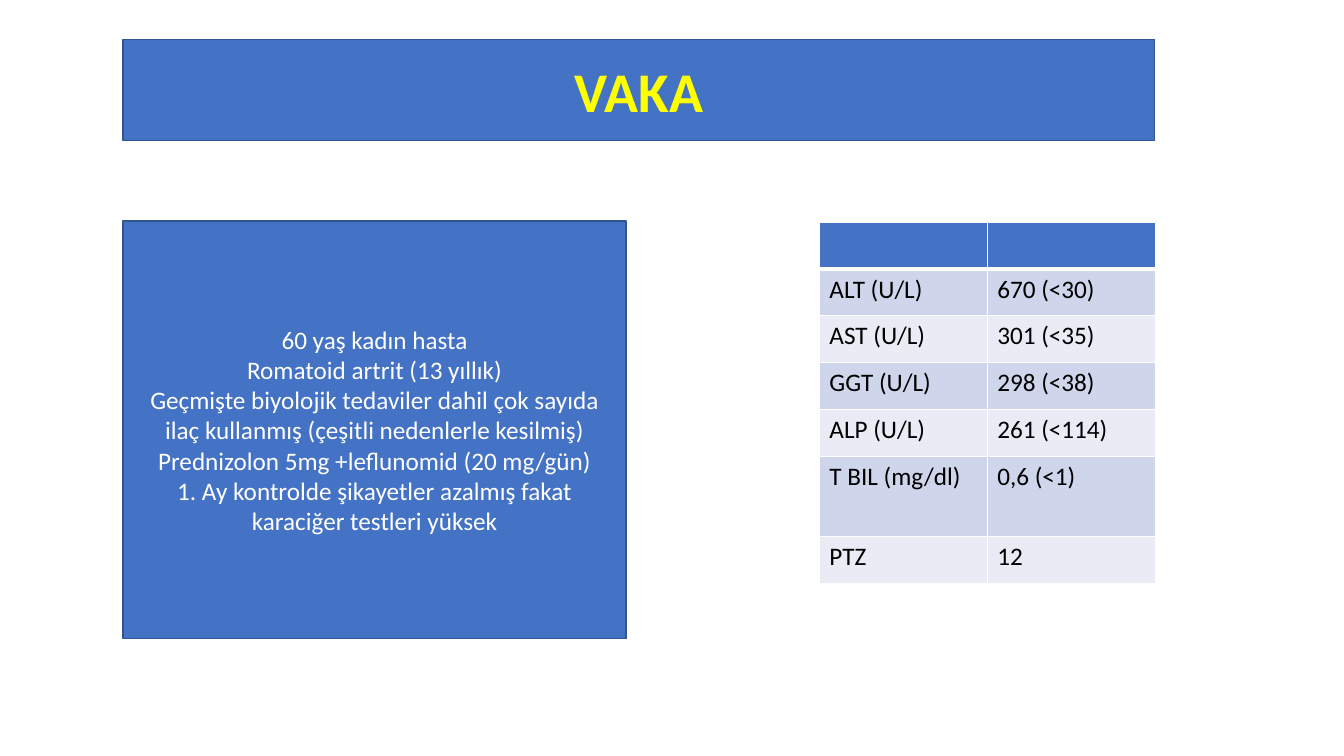
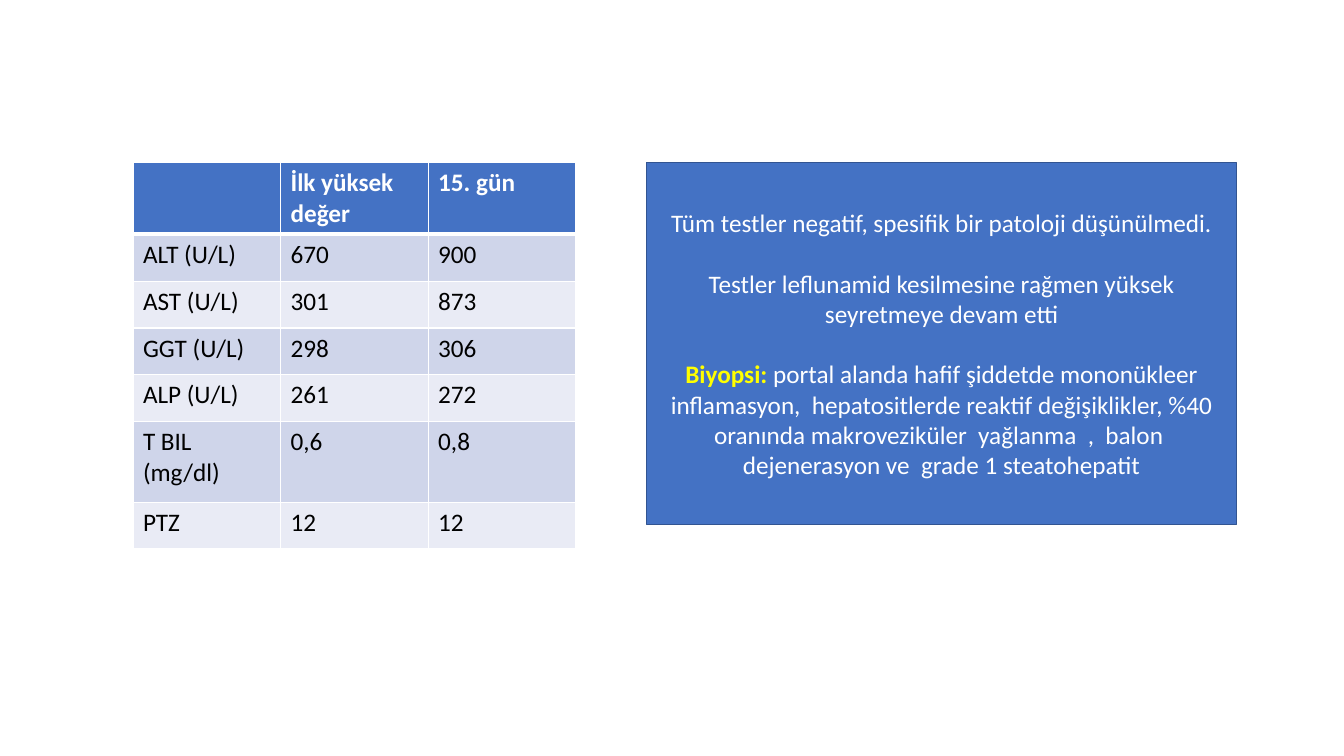
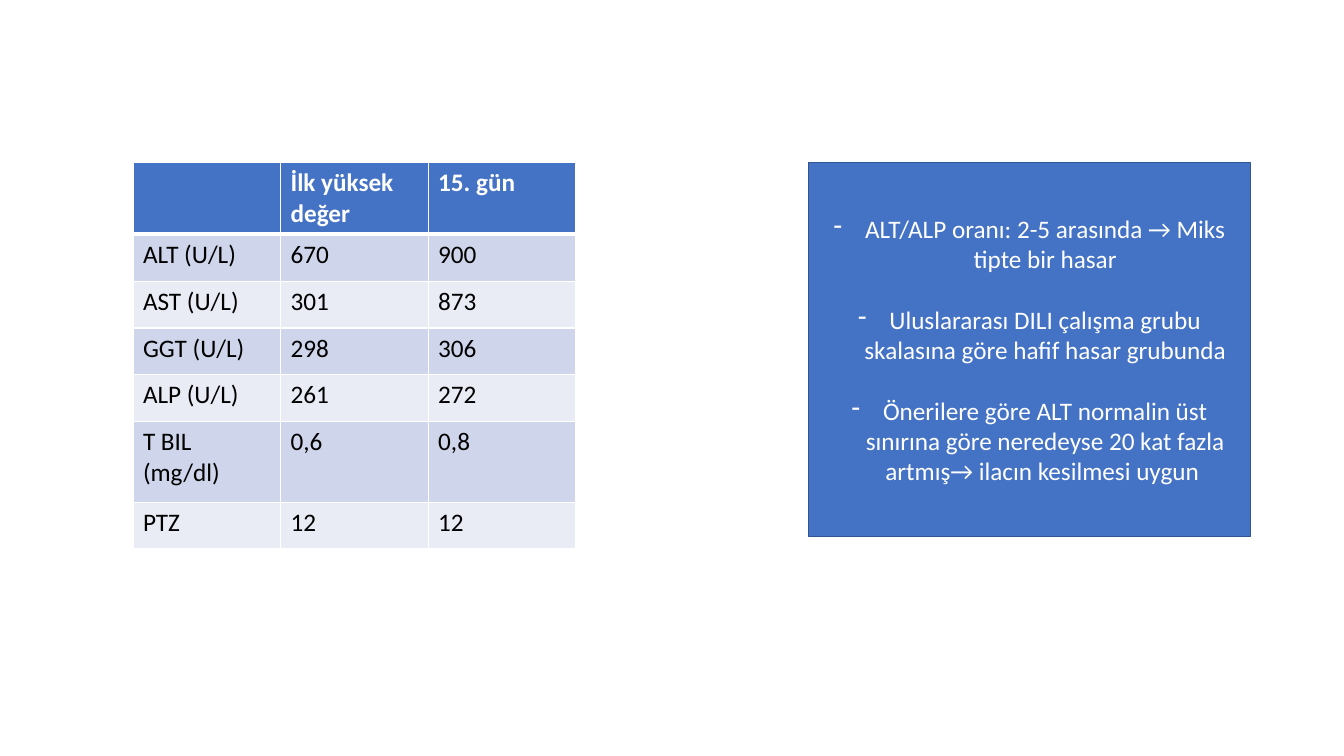
"""Builds a three-slide liver case report with lab tables and note boxes."""
from lxml.etree import SubElement as Sub
from pptx import Presentation
from pptx.dml.color import RGBColor as Rgb
from pptx.enum.shapes import MSO_SHAPE as Shape
from pptx.enum.text import MSO_ANCHOR as Anchor, PP_ALIGN as Align
from pptx.oxml import parse_xml
from pptx.oxml.ns import nsdecls, qn
from pptx.util import Cm, Pt


class Deck:
    hues = {
        "blue": "4472C4", "edge": "325491", "white": "FFFFFF", "black": "000000",
        "gold": "FFFF00", "dark": "CFD5EA", "pale": "E9EBF5",
    }
    face = "Calibri"
    size = 18
    line = 21.6
    hang = 0.79
    row = 1.18
    tall = 2.03

    def __init__(self):
        self.show = Presentation()
        self.show.slide_width, self.show.slide_height = Cm(33.87), Cm(19.05)
        self.slide = None

    def hue(self, name):
        return Rgb.from_string(self.hues[name])

    def page(self):
        self.slide = self.show.slides.add_slide(self.show.slide_layouts[6])

    def paint(self, item, name):
        item.fill.solid()
        item.fill.fore_color.rgb = self.hue(name)

    def words(self, para, text, hue, size=size, bold=False):
        run = para.add_run()
        run.text = text
        style = {"name": self.face, "size": Pt(size), "bold": bold}
        for key, value in style.items():
            setattr(run.font, key, value)
        run.font.color.rgb = self.hue(hue)

    def dash(self, para):
        props = para._p.get_or_add_pPr()
        for key, value in {"marL": Cm(self.hang), "indent": -Cm(self.hang)}.items():
            props.set(key, str(value))
        Sub(props, qn("a:buFontTx"))
        Sub(props, qn("a:buChar"), char="-")

    def panel(self, left, top, width, height):
        box = self.slide.shapes.add_shape(
            Shape.RECTANGLE, Cm(left), Cm(top), Cm(width), Cm(height))
        box.shadow.inherit = False
        self.paint(box, "blue")
        box.line.color.rgb = self.hue("edge")
        box.line.width = Pt(1)
        frame = box.text_frame
        for key, value in {"word_wrap": True, "vertical_anchor": Anchor.MIDDLE}.items():
            setattr(frame, key, value)
        return frame

    def title(self, text, place):
        para = self.panel(*place).paragraphs[0]
        para.alignment = Align.CENTER
        self.words(para, text, "gold", 40, True)

    def notes(self, items, place, gap=0, dashed=False):
        frame = self.panel(*place)
        for spot, (lead, text) in enumerate(items):
            para = frame.add_paragraph() if spot else frame.paragraphs[0]
            para.alignment = Align.CENTER
            para.space_before = Pt(gap if spot else 0)
            if dashed:
                self.dash(para)
            if lead:
                self.words(para, lead, "gold", bold=True)
            self.words(para, text, "white")

    def rule(self, cell, top, base):
        props = cell._tc.get_or_add_tcPr()
        sides = {"L": 1, "R": 1, "T": top, "B": base}
        for spot, (side, width) in enumerate(sides.items()):
            props.insert(spot, parse_xml(
                f'<a:ln{side} {nsdecls("a")} w="{Pt(width)}"><a:solidFill>'
                f'<a:srgbClr val="{self.hues["white"]}"/></a:solidFill></a:ln{side}>'))

    def table(self, rows, left, top, width):
        count, span = len(rows), len(rows[0])
        highs = [self.tall if row[0].startswith("T BIL") else self.row for row in rows]
        grid = self.slide.shapes.add_table(
            count, span, Cm(left), Cm(top), Cm(width * span), Cm(sum(highs))).table
        for col in grid.columns:
            col.width = Cm(width)
        for r, texts in enumerate(rows):
            grid.rows[r].height = Cm(highs[r])
            fill = "blue" if r == 0 else "dark" if r % 2 else "pale"
            for c, text in enumerate(texts):
                cell = grid.cell(r, c)
                self.paint(cell, fill)
                self.rule(cell, 3 if r == 1 else 1, 3 if r == 0 else 1)
                if text:
                    tone = "black" if r else "white"
                    self.words(cell.text_frame.paragraphs[0], text, tone, bold=r == 0)


def main():
    labels = ["", "ALT (U/L)", "AST (U/L)", "GGT (U/L)", "ALP (U/L)", "T BIL (mg/dl)", "PTZ"]
    norms = ["", "670 (<30)", "301 (<35)", "298 (<38)", "261 (<114)", "0,6 (<1)", "12"]
    first = ["İlk yüksek değer", "670", "301", "298", "261", "0,6", "12"]
    later = ["15. gün", "900", "873", "306", "272", "0,8", "12"]
    trend = list(zip(labels, first, later))
    deck = Deck()

    deck.page()
    deck.title("VAKA", (3.1, 1, 26, 2.54))
    deck.notes([
        ("", "60 yaş kadın hasta"),
        ("", "Romatoid artrit (13 yıllık)"),
        ("", "Geçmişte biyolojik tedaviler dahil çok sayıda ilaç kullanmış "
             "(çeşitli nedenlerle kesilmiş)"),
        ("", "Prednizolon 5mg +leflunomid (20 mg/gün)"),
        ("", "1. Ay kontrolde şikayetler azalmış fakat karaciğer testleri yüksek"),
    ], (3.1, 5.57, 12.68, 10.52))
    deck.table(list(zip(labels, norms)), 20.65, 5.6, 4.23)

    deck.page()
    deck.table(trend, 3.35, 4.1, 3.72)
    deck.notes([
        ("", "Tüm testler negatif, spesifik bir patoloji düşünülmedi."),
        ("", "Testler leflunamid kesilmesine rağmen yüksek seyretmeye devam etti"),
        ("Biyopsi:", " portal alanda hafif şiddetde mononükleer inflamasyon,  "
                     "hepatositlerde reaktif değişiklikler, %40 oranında makroveziküler  "
                     "yağlanma  ,  balon  dejenerasyon ve  grade 1 steatohepatit"),
    ], (16.3, 4.1, 14.86, 9.12), deck.line)

    deck.page()
    deck.table(trend, 3.35, 4.1, 3.72)
    deck.notes([
        ("", "ALT/ALP oranı: 2-5 arasında → Miks tipte bir hasar"),
        ("", "Uluslararası DILI çalışma grubu skalasına göre hafif hasar grubunda"),
        ("", "Önerilere göre ALT normalin üst sınırına göre neredeyse 20 kat fazla "
             "artmış→ ilacın kesilmesi uygun "),
    ], (20.37, 4.1, 11.15, 9.42), deck.line, True)

    deck.show.save("out.pptx")


if __name__ == "__main__":
    main()
